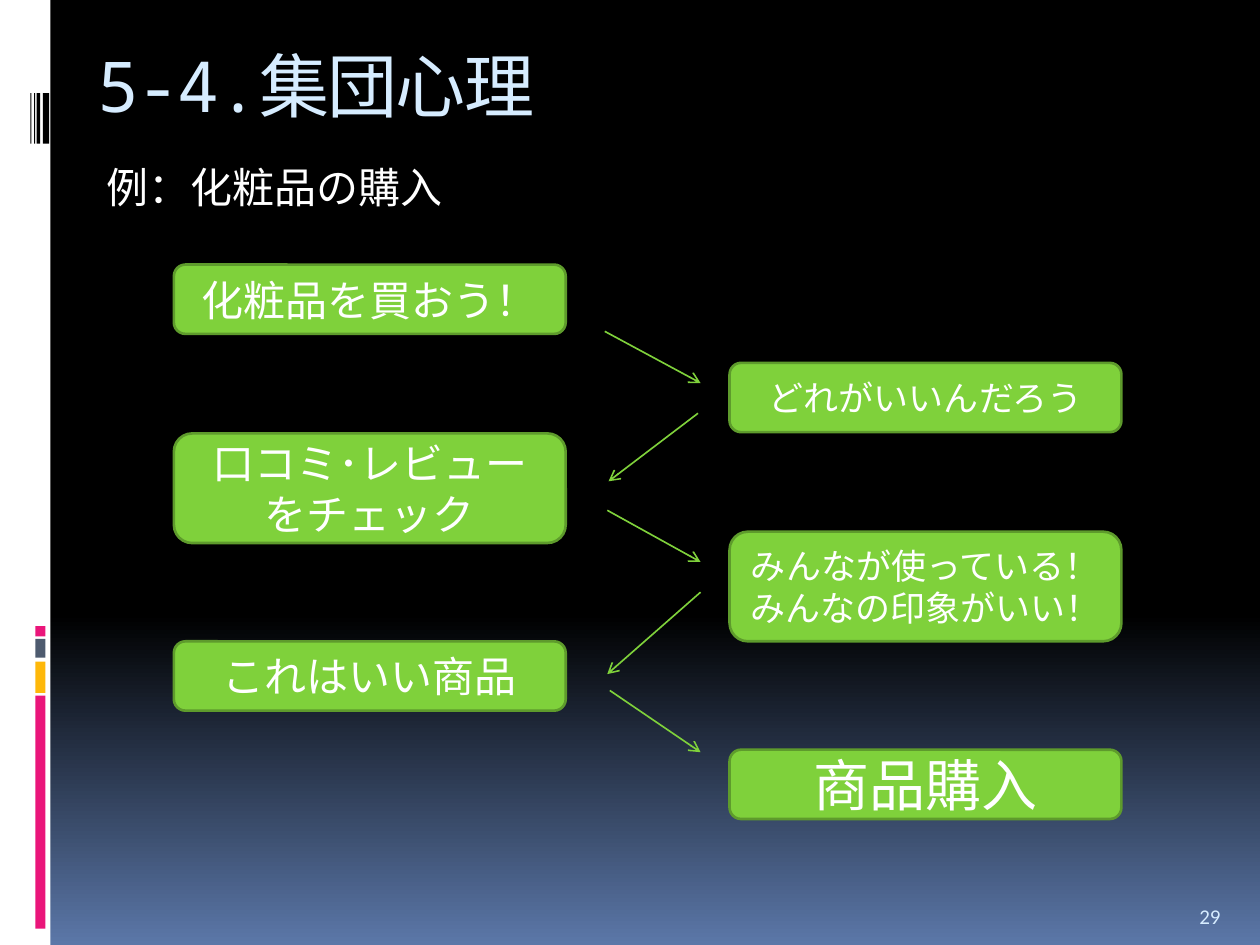
from lxml import etree
from pptx import Presentation
from pptx.dml.color import RGBColor
from pptx.enum.shapes import MSO_CONNECTOR, MSO_SHAPE
from pptx.enum.text import MSO_ANCHOR, PP_ALIGN
from pptx.oxml.ns import qn
from pptx.util import Inches, Pt

RECTANGLE, ROUNDED = MSO_SHAPE.RECTANGLE, MSO_SHAPE.ROUNDED_RECTANGLE
STRAIGHT = MSO_CONNECTOR.STRAIGHT
TOP, MIDDLE, BOTTOM = MSO_ANCHOR.TOP, MSO_ANCHOR.MIDDLE, MSO_ANCHOR.BOTTOM
LEFT, CENTER = PP_ALIGN.LEFT, PP_ALIGN.CENTER

WHITE, BLACK, PALE = "FFFFFF", "000000", "D6ECFF"
PINK, YELLOW, SLATE = "EA157A", "FEB80A", "4E5B6F"
GREEN, DARK_GREEN, SKY = "7FD13B", "5E9B2C", "5B77A8"

WIDTH, HEIGHT = 10, 7.5
COLUMNS = (1.38, 5.79)
STEP_WIDTH, LINE_HEIGHTS = 3.11, {1: 0.55, 2: 0.87}

# Steps alternate between the two columns: top, font size, lines
STEPS = [
    (2.1, 24, ["化粧品を買おう！"], 1),
    (2.88, 20, ["どれがいいんだろう"], 1),
    (3.44, 24, ["口コミ･レビューをチェック"], 2),
    (4.22, 20, ["みんなが使っている！", "みんなの印象がいい！"], 2),
    (5.09, 24, ["これはいい商品"], 1),
    (5.95, 32, ["商品購入"], 1),
]
ARROWS = [
    ((4.8, 2.63), (5.56, 3.04)),
    ((5.54, 3.28), (4.83, 3.82)),
    ((4.82, 4.05), (5.56, 4.46)),
    ((5.56, 4.7), (4.82, 5.35)),
    ((4.84, 5.48), (5.56, 5.97)),
]
# Left margin: top, height, colour of blocks; left, width of bars
BLOCKS = [(5.52, 1.85, PINK), (5.25, 0.25, YELLOW), (5.07, 0.15, SLATE), (4.97, 0.08, PINK)]
BARS = [(0.34, 0.05), (0.29, 0.03), (0.27, 0.01), (0.24, 0.01)]


def colour(value):
    return RGBColor.from_string(value)


def inches(values):
    return [Inches(value) for value in values]


def write(box, lines, size=24, color=WHITE, font="Calibri", align=LEFT, anchor=TOP):
    frame = box.text_frame
    frame.word_wrap = True
    frame.vertical_anchor = anchor
    for index, text in enumerate(lines):
        para = frame.add_paragraph() if index else frame.paragraphs[0]
        para.alignment = align
        span = para.add_run()
        span.text = text
        span.font.size = Pt(size)
        span.font.name = font
        span.font.color.rgb = colour(color)


def add_box(page, place, fill, kind=RECTANGLE, line=None):
    box = page.shapes.add_shape(kind, *inches(place))
    box.shadow.inherit = False
    box.fill.solid()
    box.fill.fore_color.rgb = colour(fill)
    if line:
        box.line.color.rgb = colour(line)
        box.line.width = Pt(1.5)
    else:
        box.line.fill.background()
    return box


def add_arrow(page, start, end):
    arrow = page.shapes.add_connector(STRAIGHT, *inches(start + end))
    arrow.line.color.rgb = colour(GREEN)
    arrow.line.width = Pt(0.94)
    line = arrow.line._get_or_add_ln()
    etree.SubElement(line, qn("a:tailEnd"), type="arrow")
    etree.SubElement(arrow._element.spPr, qn("a:effectLst"))


def paint_background(page):
    fill = page.background.fill
    fill.gradient()
    fill.gradient_angle = 270
    for stop, position, value in zip(fill.gradient_stops, (0.65, 1), (BLACK, SKY)):
        stop.position = position
        stop.color.rgb = colour(value)


def add_margin(page):
    add_box(page, (0, 0, 0.4, HEIGHT), WHITE)
    for top, height, fill in BLOCKS:
        add_box(page, (0.28, top, 0.08, height), fill)
    for left, width in BARS:
        add_box(page, (left, 0.74, width, 0.4), BLACK)


def add_title(page):
    title = page.shapes.title
    title.left, title.top, title.width, title.height = inches((0.67, 0.29, 8.5, 1))
    write(title, ["5-4.集団心理"], size=40, color=PALE, font="Noto Sans Mono")
    title.text_frame.paragraphs[0].runs[0].font._element.set("spc", "-100")


def main():
    deck = Presentation()
    deck.slide_width, deck.slide_height = inches((WIDTH, HEIGHT))
    page = deck.slides.add_slide(deck.slide_layouts[5])
    paint_background(page)
    add_margin(page)
    add_title(page)

    example = page.shapes.add_textbox(*inches((0.75, 1.23, 3.46, 0.5)))
    write(example, ["例：化粧品の購入"])
    for index, (top, size, lines, rows) in enumerate(STEPS):
        place = (COLUMNS[index % 2], top, STEP_WIDTH, LINE_HEIGHTS[rows])
        step = add_box(page, place, GREEN, kind=ROUNDED, line=DARK_GREEN)
        write(step, lines, size=size, align=CENTER, anchor=MIDDLE)
    for start, end in ARROWS:
        add_arrow(page, start, end)
    number = page.shapes.add_textbox(*inches((9.42, 7.02, 0.5, 0.4)))
    write(number, ["29"], size=12, color=PALE, anchor=BOTTOM)

    deck.save("out.pptx")


if __name__ == "__main__":
    main()
